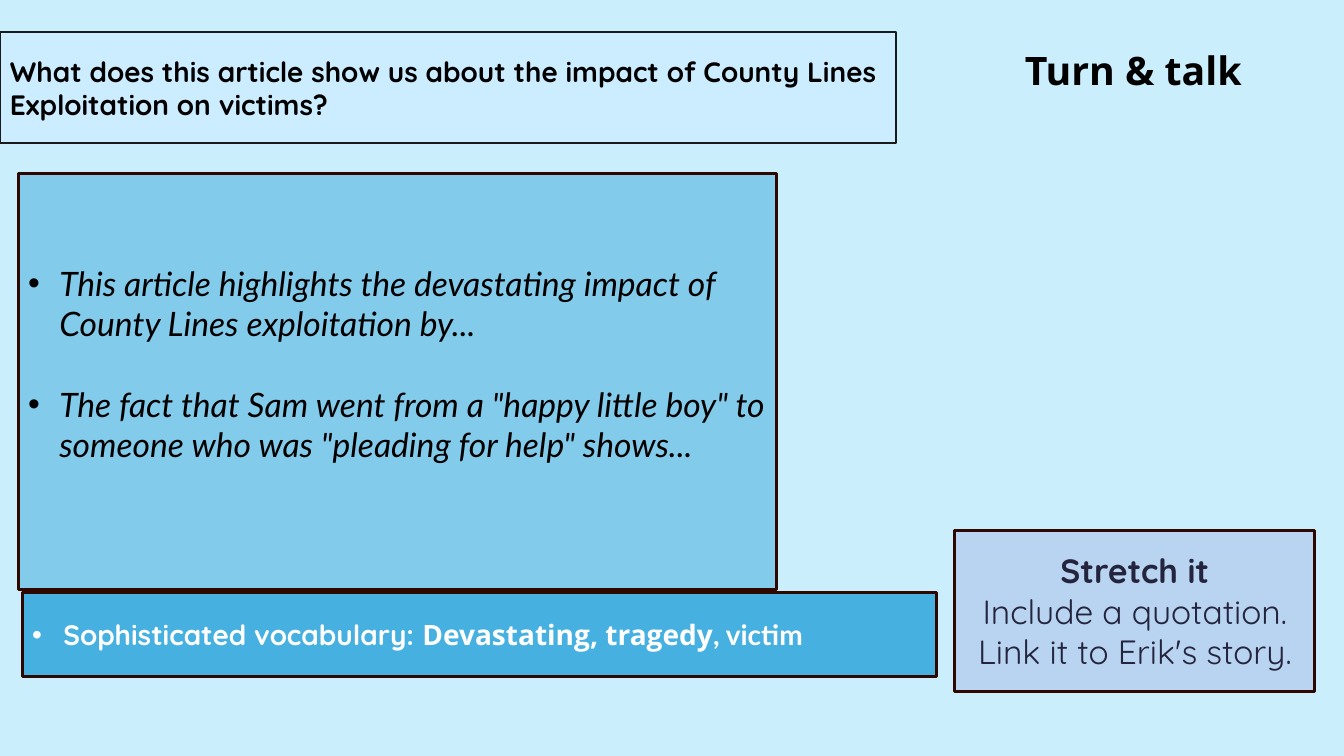
"""Build the Turn & talk discussion slide."""
from dataclasses import dataclass

from lxml import etree
from pptx import Presentation
from pptx.dml.color import RGBColor
from pptx.enum.shapes import MSO_SHAPE
from pptx.enum.text import MSO_ANCHOR, MSO_AUTO_SIZE, PP_ALIGN
from pptx.oxml.ns import qn
from pptx.util import Inches, Pt

RECT = MSO_SHAPE.RECTANGLE
MIDDLE = MSO_ANCHOR.MIDDLE
FIXED = MSO_AUTO_SIZE.NONE
LEFT, CENTER = PP_ALIGN.LEFT, PP_ALIGN.CENTER

COLORS = {
    "back": "CAEEFB", "pale": "CCECFF", "sky": "83CBEB", "blue": "46B1E1",
    "lilac": "B8D4F0", "edge": "2E0701", "dark": "1A1A1A",
    "black": "000000", "white": "FFFFFF", "navy": "24243E",
}
HEAD = {"name": "Quicksand", "size": Pt(20), "bold": True}
PROMPT = {"name": "Lato", "size": Pt(24), "bold": False, "italic": True}
STRETCH = {"name": "Quicksand", "size": Pt(24), "bold": True}
TALK = {"name": "Open Sans", "size": Pt(28), "bold": True}


@dataclass
class Run:
    """Text with one format."""
    text: str
    form: dict


@dataclass
class Para:
    """One line or bullet of runs."""
    runs: list[Run]
    align: PP_ALIGN = LEFT
    bullet: bool = False
    before: float = 0


@dataclass
class Panel:
    """A filled box with text."""
    area: tuple[float, float, float, float]
    fill: str
    ink: str
    paras: list[Para]
    edge: str = "edge"
    width: float = 2
    bottom: float = 0.05


PANELS = [
    Panel((0, 0.32, 8.89, 1.1), "pale", "black", [
        Para([Run("What does this article show us about the impact of "
                  "County Lines Exploitation on victims?", HEAD)]),
    ], edge="dark", width=1.5),
    Panel((0.18, 1.72, 7.52, 4.13), "sky", "black", [
        Para([Run("This article highlights the devastating impact of "
                  "County Lines exploitation by...", PROMPT)], bullet=True),
        Para([Run('The fact that Sam went from a "happy little boy" to '
                  'someone who was "pleading for help" shows...', PROMPT)],
             bullet=True, before=29),
    ], bottom=0.41),
    Panel((0.22, 5.88, 9.07, 0.83), "blue", "white", [
        Para([Run("Sophisticated vocabulary: ", HEAD),
              Run("Devastating, tragedy", HEAD | {"name": "Open Sans"}),
              Run(", victim", HEAD | {"name": "Lato"})], bullet=True),
    ]),
    Panel((9.47, 5.26, 3.57, 1.6), "lilac", "navy", [
        Para([Run("Stretch it", STRETCH)], CENTER),
        Para([Run("Include a quotation.", STRETCH | {"bold": False})], CENTER),
        Para([Run("Link it to Erik's story.", STRETCH | {"bold": False})], CENTER),
    ]),
]


def color(key: str) -> RGBColor:
    """Look up a named colour."""
    return RGBColor.from_string(COLORS[key])


def assign(target: object, values: dict) -> None:
    """Set each value as an attribute."""
    for name, value in values.items():
        setattr(target, name, value)


def add_dot(line) -> None:
    """Give a paragraph a hanging bullet."""
    props = line._p.get_or_add_pPr()
    props.set("marL", str(Inches(0.31)))
    props.set("indent", str(Inches(-0.31)))
    etree.SubElement(props, qn("a:buFont")).set("typeface", "Arial")
    etree.SubElement(props, qn("a:buChar")).set("char", "•")


def write(frame, paras: list[Para], ink: str) -> None:
    """Fill a text frame with paragraphs."""
    assign(frame, {"word_wrap": True, "auto_size": FIXED,
                   "vertical_anchor": MIDDLE})
    for index, para in enumerate(paras):
        line = frame.add_paragraph() if index else frame.paragraphs[0]
        assign(line, {"alignment": para.align, "space_before": Pt(para.before)})
        if para.bullet:
            add_dot(line)
        for part in para.runs:
            run = line.add_run()
            run.text = part.text
            assign(run.font, part.form)
            run.font.color.rgb = color(ink)


def draw(slide, panel: Panel) -> None:
    """Draw one panel."""
    box = slide.shapes.add_shape(RECT, *map(Inches, panel.area))
    box.shadow.inherit = False
    box.fill.solid()
    box.fill.fore_color.rgb = color(panel.fill)
    box.line.color.rgb = color(panel.edge)
    box.line.width = Pt(panel.width)
    box.text_frame.margin_bottom = Inches(panel.bottom)
    write(box.text_frame, panel.paras, panel.ink)


def main() -> None:
    """Build and save the slide."""
    deck = Presentation()
    assign(deck, {"slide_width": Inches(13.33), "slide_height": Inches(7.5)})
    slide = deck.slides.add_slide(deck.slide_layouts[5])
    slide.background.fill.solid()
    slide.background.fill.fore_color.rgb = color("back")
    title = slide.shapes.title
    assign(title, {"left": Inches(9.31), "top": Inches(0.32),
                   "width": Inches(3.86), "height": Inches(0.8)})
    write(title.text_frame, [Para([Run("Turn & talk", TALK)], CENTER)], "black")
    title.text_frame.paragraphs[0].line_spacing = 0.9
    for panel in PANELS:
        draw(slide, panel)
    deck.save("out.pptx")


if __name__ == "__main__":
    main()
